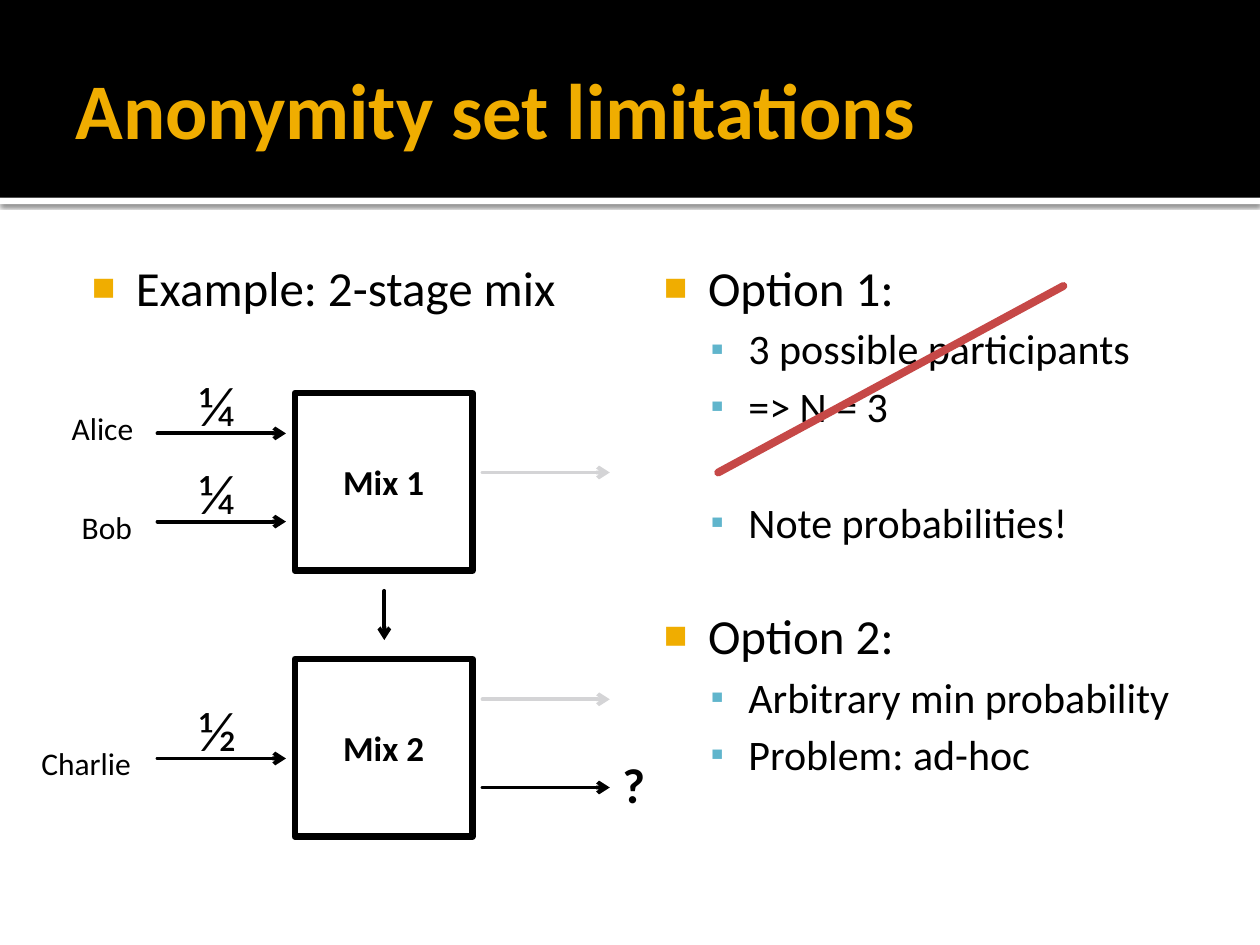
from lxml import etree
from pptx import Presentation
from pptx.dml.color import RGBColor
from pptx.enum.shapes import MSO_CONNECTOR, MSO_SHAPE
from pptx.enum.text import MSO_ANCHOR, PP_ALIGN
from pptx.oxml import parse_xml
from pptx.oxml.ns import nsdecls, qn
from pptx.util import Inches, Pt

BLACK, WHITE, GOLD = "000000", "FFFFFF", "F0AD00"
GREY, BLUE, RED = "D4D4D6", "60B5CC", "C64847"

color = RGBColor.from_string

prs = Presentation()
prs.slide_width, prs.slide_height = Inches(10), Inches(7.5)
s = prs.slides.add_slide(prs.slide_layouts[6])


def add_text(p, text, size, bold=False, c=BLACK):
    r = p.add_run()
    r.text = text
    for name, value in {"name": "Calibri", "size": Pt(size), "bold": bold}.items():
        setattr(r.font, name, value)
    r.font.color.rgb = color(c)


def add_box(x, y, w, h, left=0.1, top=0.05, right=0):
    tf = s.shapes.add_textbox(Inches(x), Inches(y), Inches(w), Inches(h)).text_frame
    fmt = {"word_wrap": True, "margin_left": Inches(left),
           "margin_top": Inches(top), "margin_right": Inches(right)}
    for name, value in fmt.items():
        setattr(tf, name, value)
    return tf


# Header band and the white strip with its shadow
for y, h, fill in [(1.57, 0.05, WHITE), (0, 1.57, BLACK)]:
    sp = s.shapes.add_shape(MSO_SHAPE.RECTANGLE, 0, Inches(y), Inches(10), Inches(h))
    sp.fill.solid()
    sp.fill.fore_color.rgb = color(fill)
    sp.line.fill.background()
    sp.shadow.inherit = False
    if fill == WHITE:
        sp._element.spPr.find(qn("a:effectLst")).append(parse_xml(
            f'<a:outerShdw {nsdecls("a")} blurRad="31750" dist="10160" dir="5400000">'
            '<a:srgbClr val="000000"><a:alpha val="60000"/></a:srgbClr></a:outerShdw>'))

# Title
tf = add_box(0.5, 0.17, 9, 1.37, right=0.05)
tf.vertical_anchor = MSO_ANCHOR.MIDDLE
add_text(tf.paragraphs[0], "Anonymity set limitations", 45, True, GOLD)

# Bulleted columns: level, space before in points, text
levels = [
    {"size": 28, "left": 0.48, "indent": -0.35, "char": "■", "color": GOLD, "pct": 80},
    {"size": 24, "left": 0.8, "indent": -0.3, "char": "▪", "color": BLUE, "pct": 90},
]
columns = [
    (0.5, 0.1, [(0, 0, "Example: 2-stage mix")]),
    (5.08, 0.06, [
        (0, 0, "Option 1:"),
        (1, 4, "3 possible participants"),
        (1, 4, "=> N = 3"),
        (1, 37.5, "Note probabilities!"),
        (0, 33.5, "Option 2:"),
        (1, 4, "Arbitrary min probability"),
        (1, 4, "Problem: ad-hoc"),
    ]),
]
for x, inset, items in columns:
    tf = add_box(x, 1.94, 4.42, 5.06, left=inset, top=0.1, right=0.1)
    for i, (level, before, text) in enumerate(items):
        p = tf.add_paragraph() if i else tf.paragraphs[0]
        lv = levels[level]
        p.level = level
        p.space_before = Pt(before)
        pPr = p._p.get_or_add_pPr()
        pPr.set("marL", str(Inches(lv["left"])))
        pPr.set("indent", str(Inches(lv["indent"])))
        bu = etree.SubElement(pPr, qn("a:buClr"))
        etree.SubElement(bu, qn("a:srgbClr"), val=lv["color"])
        etree.SubElement(pPr, qn("a:buSzPct"), val=str(lv["pct"] * 1000))
        etree.SubElement(pPr, qn("a:buFont"), typeface="Arial")
        etree.SubElement(pPr, qn("a:buChar"), char=lv["char"])
        add_text(p, text, lv["size"])

# Mix boxes
for y, text in [(3.12, "Mix 1"), (5.23, "Mix 2")]:
    sp = s.shapes.add_shape(MSO_SHAPE.RECTANGLE, Inches(2.34), Inches(y),
                            Inches(1.41), Inches(1.41))
    sp.fill.solid()
    sp.fill.fore_color.rgb = color(WHITE)
    sp.line.color.rgb = color(BLACK)
    sp.line.width = Pt(3.78)
    etree.SubElement(sp.line._get_or_add_ln(), qn("a:round"))
    sp.shadow.inherit = False
    tf = sp.text_frame
    tf.vertical_anchor = MSO_ANCHOR.MIDDLE
    p = tf.paragraphs[0]
    p.alignment = PP_ALIGN.CENTER
    add_text(p, text, 20, True)

# Message arrows and the strike through option 1
into, out = (1.25, 2.27), (3.83, 4.84)
flows = [(into, 3.44, BLACK), (into, 4.14, BLACK), (out, 3.75, GREY),
         (into, 6.02, BLACK), (out, 5.55, GREY), (out, 6.25, BLACK)]
lines = [(x1, y, x2, y, c, 2.25, True) for (x1, x2), y, c in flows]
lines += [(3.05, 4.69, 3.05, 5.08, BLACK, 2.25, True),
          (5.7, 3.75, 8.44, 2.27, RED, 4.5, False)]
for x1, y1, x2, y2, c, width, arrow in lines:
    sp = s.shapes.add_connector(MSO_CONNECTOR.STRAIGHT, Inches(x1), Inches(y1),
                                Inches(x2), Inches(y2))
    sp.line.color.rgb = color(c)
    sp.line.width = Pt(width)
    ln = sp.line._get_or_add_ln()
    ln.set("cap", "rnd")
    etree.SubElement(ln, qn("a:round"))
    if arrow:
        etree.SubElement(ln, qn("a:tailEnd"), type="arrow")
    etree.SubElement(sp._element.spPr, qn("a:effectLst"))

# Senders, unknown receiver and probabilities
labels = [
    (0.47, 3.2, 0.71, 0.4, "Alice", 18, False),
    (0.55, 3.98, 0.62, 0.4, "Bob", 18, False),
    (0.23, 5.86, 0.94, 0.4, "Charlie", 18, False),
    (4.84, 5.94, 0.38, 0.57, "?", 28, True),
    (1.48, 5.47, 0.68, 0.64, "½", 32, False),
    (1.48, 3.59, 0.68, 0.64, "¼", 32, False),
    (1.48, 2.89, 0.68, 0.64, "¼", 32, False),
]
for x, y, w, h, text, size, bold in labels:
    add_text(add_box(x, y, w, h).paragraphs[0], text, size, bold)

prs.save("out.pptx")
